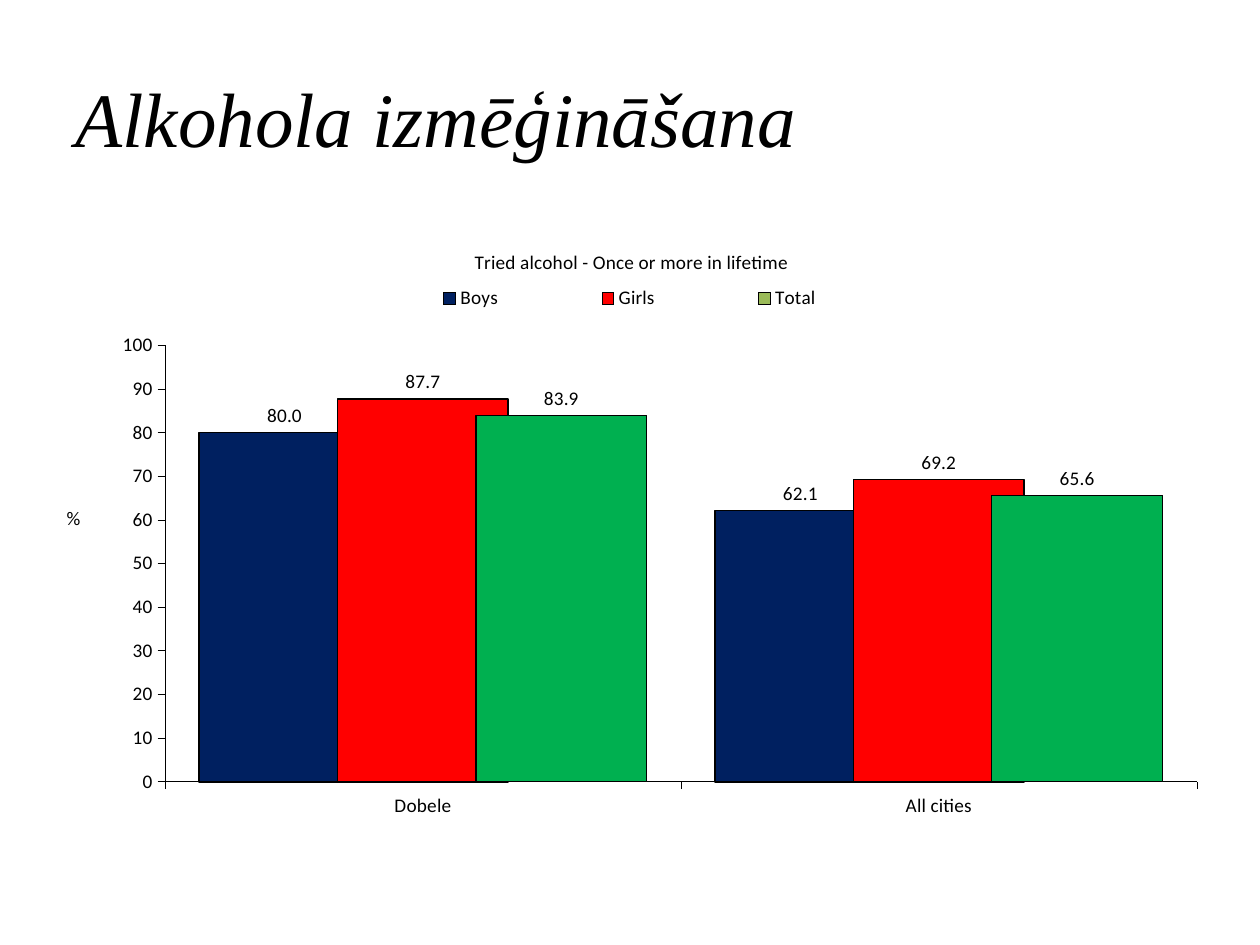
"""Build a slide with a clustered column chart of alcohol use by city and sex."""
from lxml import etree
from pptx import Presentation
from pptx.chart.data import CategoryChartData
from pptx.dml.color import RGBColor
from pptx.enum.chart import (XL_CHART_TYPE, XL_LABEL_POSITION,
                             XL_LEGEND_POSITION, XL_TICK_MARK)
from pptx.enum.text import MSO_ANCHOR, PP_ALIGN
from pptx.oxml.ns import qn
from pptx.util import Inches, Pt

COLUMNS = XL_CHART_TYPE.COLUMN_CLUSTERED
OUTSIDE_END = XL_LABEL_POSITION.OUTSIDE_END
LEGEND_TOP = XL_LEGEND_POSITION.TOP
TICK_OUT = XL_TICK_MARK.OUTSIDE
MIDDLE = MSO_ANCHOR.MIDDLE
LEFT = PP_ALIGN.LEFT

BLACK = RGBColor(0x00, 0x00, 0x00)
NAVY = RGBColor(0x00, 0x20, 0x60)
RED = RGBColor(0xFF, 0x00, 0x00)
OLIVE = RGBColor(0x9B, 0xBB, 0x59)
GREEN = RGBColor(0x00, 0xB0, 0x50)

TITLE = "Alkohola izmēģināšana"
CHART_TITLE = "Tried alcohol - Once or more in lifetime"
CITIES = ["Dobele", "All cities"]
# name, values, series colour, column colour, outline width
SERIES = [
    ("Boys", (80.0, 62.1), NAVY, NAVY, 1),
    ("Girls", (87.7, 69.2), RED, RED, 1),
    ("Total", (83.9, 65.6), OLIVE, GREEN, 0.75),
]


def style_font(font, size, name, bold=False, italic=False):
    font.size, font.name = Pt(size), name
    font.bold, font.italic = bold, italic
    font.color.rgb = BLACK


def outline(line, width):
    line.color.rgb = BLACK
    line.width = Pt(width)


def paint(fmt, color, width):
    fmt.fill.solid()
    fmt.fill.fore_color.rgb = color
    outline(fmt.line, width)


def set_layout(parent, x, y, w=None, h=None, inner=False):
    for old in parent.findall(qn("c:layout")):
        parent.remove(old)
    layout = etree.Element(qn("c:layout"))
    manual = etree.SubElement(layout, qn("c:manualLayout"))
    values = [("layoutTarget", "inner" if inner else None),
              ("xMode", "edge"), ("yMode", "edge"),
              ("x", x), ("y", y), ("w", w), ("h", h)]
    for tag, value in values:
        if value is not None:
            etree.SubElement(manual, qn(f"c:{tag}")).set("val", str(value))
    overlay = parent.find(qn("c:overlay"))
    if overlay is None:
        parent.insert(0, layout)
    else:
        overlay.addprevious(layout)


def add_text(tf, text, size, name, italic=False):
    r = tf.paragraphs[0].add_run()
    r.text = text
    style_font(r.font, size, name, italic=italic)


def add_title(s):
    sp = s.shapes.title
    sp.left, sp.top, sp.width, sp.height = map(Inches, (0.5, 0.3, 9, 1.25))
    tf = sp.text_frame
    tf.word_wrap, tf.vertical_anchor = True, MIDDLE
    tf.paragraphs[0].alignment = LEFT
    add_text(tf, TITLE, 44, "Times New Roman", italic=True)


def style_axes(chart):
    for axis in (chart.category_axis, chart.value_axis):
        axis.major_tick_mark = TICK_OUT
        axis.has_major_gridlines = False
        outline(axis.format.line, 0.25)
    axis = chart.value_axis
    axis.minimum_scale, axis.maximum_scale, axis.major_unit = 0, 100, 10
    axis.tick_labels.number_format = "0"
    axis.tick_labels.number_format_is_linked = False
    tf = axis.axis_title.text_frame
    add_text(tf, "%", 11, "Calibri")
    body = axis.axis_title._element.find(".//" + qn("a:bodyPr"))
    body.set("rot", "0")
    body.set("vert", "horz")
    set_layout(axis.axis_title._element, 0, 0.45)


def style_series(plot):
    plot.gap_width, plot.overlap, plot.vary_by_categories = 40, 19, False
    for series, (_, values, color, column_color, width) in zip(plot.series, SERIES):
        paint(series.format, color, width)
        if column_color != color:
            for i in range(len(values)):
                paint(series.points[i].format, column_color, width)
        labels = series.data_labels
        labels.show_value, labels.position = True, OUTSIDE_END
        labels.number_format, labels.number_format_is_linked = "0.0", False


def add_chart(s):
    data = CategoryChartData(number_format="0.0")
    data.categories = CITIES
    for name, values, *_ in SERIES:
        data.add_series(name, values)
    box = map(Inches, (0.5, 1.75, 9, 4.95))
    chart = s.shapes.add_chart(COLUMNS, *box, data).chart
    style_font(chart.font, 11, "Calibri")
    chart.has_title = True
    add_text(chart.chart_title.text_frame, CHART_TITLE, 11, "Calibri")
    set_layout(chart.chart_title._element, 0.36, 0.04)
    chart.has_legend = True
    chart.legend.position = LEGEND_TOP
    chart.legend.include_in_layout = False
    set_layout(chart.legend._element, 0.25, 0.09, 0.5, 0.07)
    style_axes(chart)
    style_series(chart.plots[0])
    plot_area = chart._chartSpace.find(".//" + qn("c:plotArea"))
    set_layout(plot_area, 0.09, 0.2, 0.91, 0.7, inner=True)


def main():
    prs = Presentation()
    prs.slide_width, prs.slide_height = Inches(10), Inches(7.5)
    s = prs.slides.add_slide(prs.slide_layouts[5])
    add_title(s)
    add_chart(s)
    prs.save("out.pptx")


if __name__ == "__main__":
    main()
